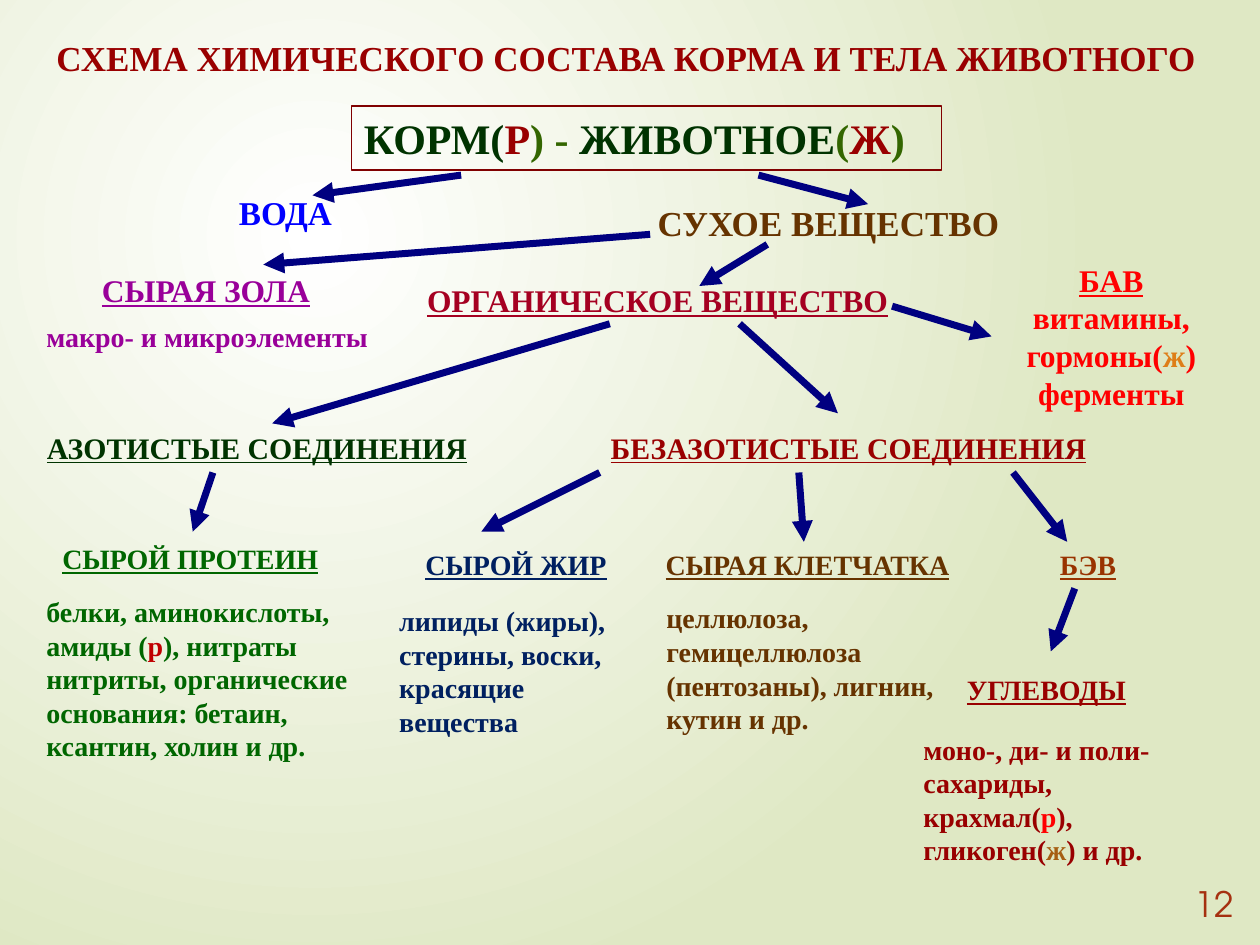
from pptx import Presentation
from pptx.dml.color import RGBColor
from pptx.enum.shapes import MSO_CONNECTOR, MSO_SHAPE
from pptx.enum.text import MSO_ANCHOR, MSO_AUTO_SIZE, PP_ALIGN
from pptx.oxml import parse_xml
from pptx.oxml.ns import nsdecls, qn
from pptx.util import Inches, Pt

COLORS = {
    "white": "FFFFFF", "sage": "DFE8C4", "arrow": "000080", "frame": "800000",
    "maroon": "990000", "purple": "990099", "red": "FF0000", "orange": "DE7E18",
    "ochre": "A65E12", "forest": "003300", "olive": "336600", "blue": "0000FF",
    "brown": "663300", "crimson": "A50021", "green": "006600", "navy": "002060",
    "rust": "993300", "number": "A53010", "dark_red": "C00000",
}
HEADING = {"underline": True, "align": PP_ALIGN.CENTER}
WRAPPED = {"wrap": True}


def rgb(name):
    """Return the named palette colour."""
    return RGBColor.from_string(COLORS[name])


def write_text(shape, paragraphs, size, align=PP_ALIGN.LEFT, anchor=MSO_ANCHOR.TOP,
               wrap=False, underline=False, bold=True, font="Times New Roman",
               grow=MSO_AUTO_SIZE.SHAPE_TO_FIT_TEXT):
    """Fill a shape with paragraphs of (text, colour) runs."""
    frame = shape.text_frame
    frame_format = {"word_wrap": wrap, "vertical_anchor": anchor, "auto_size": grow}
    for name, value in frame_format.items():
        setattr(frame, name, value)
    for index, runs in enumerate(paragraphs):
        paragraph = frame.paragraphs[0] if index == 0 else frame.add_paragraph()
        paragraph.alignment = align
        run_format = {"name": font, "size": Pt(size), "bold": bold,
                      "underline": underline and index == 0}
        for text, color in runs:
            run = paragraph.add_run()
            run.text = text
            run.font.color.rgb = rgb(color)
            for name, value in run_format.items():
                setattr(run.font, name, value)


def add_label(slide, box, at, paragraphs, size=16, **text_format):
    """Add a text box placed relative to the region box."""
    left, top, width, height = at
    shape = slide.shapes.add_textbox(Inches(box[0] + left), Inches(box[1] + top),
                                     Inches(width), Inches(height))
    write_text(shape, paragraphs, size, **text_format)


def add_arrows(slide, box, arrows):
    """Draw arrows given as start and end points relative to the region box."""
    for start_x, start_y, end_x, end_y in arrows:
        connector = slide.shapes.add_connector(
            MSO_CONNECTOR.STRAIGHT, Inches(box[0] + start_x), Inches(box[1] + start_y),
            Inches(box[0] + end_x), Inches(box[1] + end_y))
        connector.line.color.rgb = rgb("arrow")
        connector.line.width = Pt(4)
        connector.line._get_or_add_ln().append(
            parse_xml(f'<a:tailEnd {nsdecls("a")} type="triangle"/>'))
        connector._element.spPr.append(parse_xml(f'<a:effectLst {nsdecls("a")}/>'))


def paint_background(slide):
    """Apply the radial gradient behind the scheme."""
    fill = slide.background.fill
    fill.gradient()
    for stop, color in zip(fill.gradient_stops, ("white", "sage")):
        stop.color.rgb = rgb(color)
    linear = slide.element.find(".//" + qn("a:lin"))
    linear.getparent().replace(linear, parse_xml(
        f'<a:path {nsdecls("a")} path="circle">'
        '<a:fillToRect l="50000" t="50000" r="100000" b="100000"/></a:path>'))


def add_header(slide, box):
    """Add the title and the framed root of the scheme."""
    add_label(slide, box, (0, 0, 9.3, 0.43),
              [[("СХЕМА ХИМИЧЕСКОГО СОСТАВА КОРМА И ТЕЛА ЖИВОТНОГО", "maroon")]],
              20, anchor=MSO_ANCHOR.MIDDLE)
    root = slide.shapes.add_shape(MSO_SHAPE.RECTANGLE, Inches(box[0] + 2.44),
                                  Inches(box[1] + 0.6), Inches(4.68), Inches(0.51))
    root.shadow.inherit = False
    root.fill.background()
    root.line.color.rgb = rgb("frame")
    root.line.width = Pt(0.75)
    write_text(root, [[("КОРМ(", "forest"), ("Р", "maroon"), (") - ", "olive"),
                       ("ЖИВОТНОЕ", "forest"), ("(", "olive"), ("Ж", "maroon"),
                       (")", "olive")]], 24, wrap=True, grow=MSO_AUTO_SIZE.NONE)
    add_arrows(slide, box, [(3.31, 1.15, 2.13, 1.31), (5.67, 1.15, 6.54, 1.38)])


def add_main_parts(slide, box):
    """Add water, dry matter, ash, organic matter and active substances."""
    center = {"align": PP_ALIGN.CENTER}
    add_label(slide, box, (1.79, 0, 0.95, 0.42), [[("ВОДА", "blue")]], 19, **center)
    add_label(slide, box, (5.11, 0.07, 2.93, 0.43),
              [[("СУХОЕ ВЕЩЕСТВО", "brown")]], 20, **center)
    add_label(slide, box, (-0.23, 0.62, 3.73, 0.4),
              [[("СЫРАЯ ЗОЛА", "purple")]], 18, **HEADING, **WRAPPED)
    add_label(slide, box, (0.27, 1.01, 2.76, 0.37),
              [[("макро- и микроэлементы", "purple")]])
    add_label(slide, box, (3.27, 0.7, 3.9, 0.4),
              [[("ОРГАНИЧЕСКОЕ ВЕЩЕСТВО", "crimson")]], 18, **HEADING)
    add_label(slide, box, (7.68, 0.54, 2.28, 1.3),
              [[("БАВ", "red")],
               [("витамины, гормоны(", "red"), ("ж", "orange"), (") ферменты", "red")]],
              18, **HEADING, **WRAPPED)
    add_arrows(slide, box, [
        (5.16, 0.38, 2.09, 0.62), (6.09, 0.46, 5.55, 0.79), (7.08, 0.95, 7.87, 1.19),
        (4.84, 1.09, 2.16, 1.88), (5.87, 1.09, 6.65, 1.8)])


def add_nitrogen_branch(slide, box):
    """Add nitrogenous compounds and crude protein."""
    add_label(slide, box, (0, 0, 3.54, 0.38),
              [[("АЗОТИСТЫЕ СОЕДИНЕНИЯ", "forest")]], 17, **HEADING)
    add_label(slide, box, (0.12, 0.89, 2.24, 0.37),
              [[("СЫРОЙ ПРОТЕИН", "green")]], **HEADING)
    add_label(slide, box, (0, 1.31, 2.76, 1.45),
              [[("белки, аминокислоты, амиды (", "green"), ("р", "dark_red"),
                ("), нитраты нитриты, органические основания: бетаин, "
                 "ксантин, холин и др.", "green")]], **WRAPPED)
    add_arrows(slide, box, [(1.42, 0.39, 1.26, 0.86)])


def add_nitrogen_free_branch(slide, box):
    """Add nitrogen-free compounds: fat, fibre and carbohydrates."""
    add_label(slide, box, (1.54, 0, 4.25, 0.39),
              [[("БЕЗАЗОТИСТЫЕ СОЕДИНЕНИЯ", "maroon")]], 17, **HEADING, **WRAPPED)
    headings = [(0.2, 0.94, 1.65, "СЫРОЙ ЖИР", "navy"),
                (2.09, 0.94, 2.5, "СЫРАЯ КЛЕТЧАТКА", "brown"),
                (5.24, 0.94, 0.65, "БЭВ", "rust"),
                (4.48, 1.93, 1.51, "УГЛЕВОДЫ", "maroon")]
    for left, top, width, text, color in headings:
        add_label(slide, box, (left, top, width, 0.37), [[(text, color)]], **HEADING)
    details = [
        (0, 1.38, 1.97, "липиды (жиры), стерины, воски, красящие вещества", "navy"),
        (2.12, 1.36, 2.49,
         "целлюлоза, гемицеллюлоза (пентозаны), лигнин, кутин и др.", "brown")]
    for left, top, width, text, color in details:
        add_label(slide, box, (left, top, width, 1.18), [[(text, color)]], **WRAPPED)
    add_label(slide, box, (4.16, 2.4, 2.05, 1.17),
              [[("моно-, ди- и поли-", "maroon")], [("сахариды,", "maroon")],
               [("крахмал(", "maroon"), ("р", "red"), ("),", "maroon")],
               [("гликоген(", "maroon"), ("ж", "ochre"), (") и др.", "maroon")]],
              anchor=MSO_ANCHOR.MIDDLE, **WRAPPED)
    add_arrows(slide, box, [
        (1.69, 0.39, 0.75, 0.86), (3.27, 0.39, 3.31, 0.94),
        (4.97, 0.39, 5.4, 0.94), (5.46, 1.31, 5.27, 1.81)])


def add_page_number(slide, box):
    """Add the slide number."""
    add_label(slide, box, (0, 0, 0.64, 0.4), [[("12", "number")]], 20,
              align=PP_ALIGN.RIGHT, anchor=MSO_ANCHOR.MIDDLE, bold=False,
              font="TeX Gyre Adventor", grow=MSO_AUTO_SIZE.NONE, **WRAPPED)


def main():
    """Build and save the presentation."""
    presentation = Presentation()
    presentation.slide_width = Inches(10)
    presentation.slide_height = Inches(7.5)
    slide = presentation.slides.add_slide(presentation.slide_layouts[6])
    paint_background(slide)
    add_header(slide, (0.35, 0.24))
    add_main_parts(slide, (0, 1.48))
    add_nitrogen_branch(slide, (0.27, 3.36))
    add_nitrogen_free_branch(slide, (3.07, 3.36))
    add_page_number(slide, (9.25, 6.97))
    presentation.save("out.pptx")


if __name__ == "__main__":
    main()
